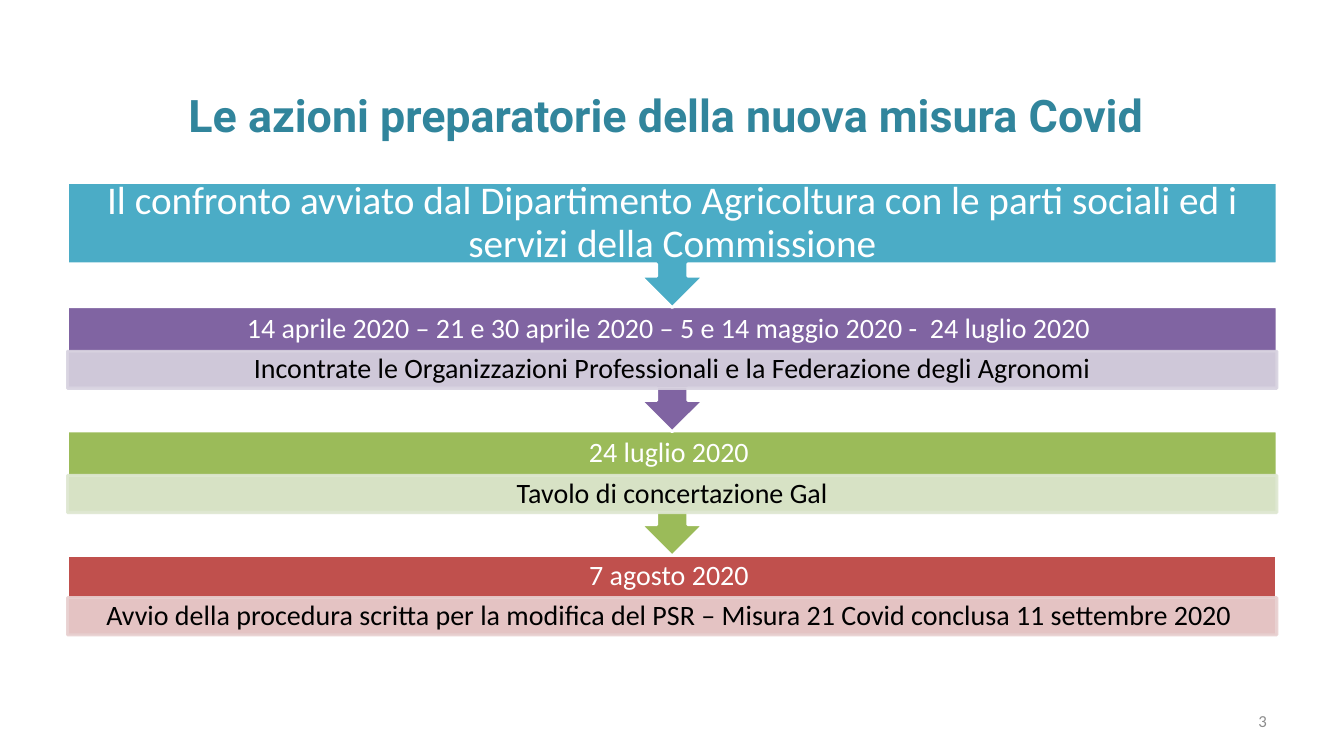
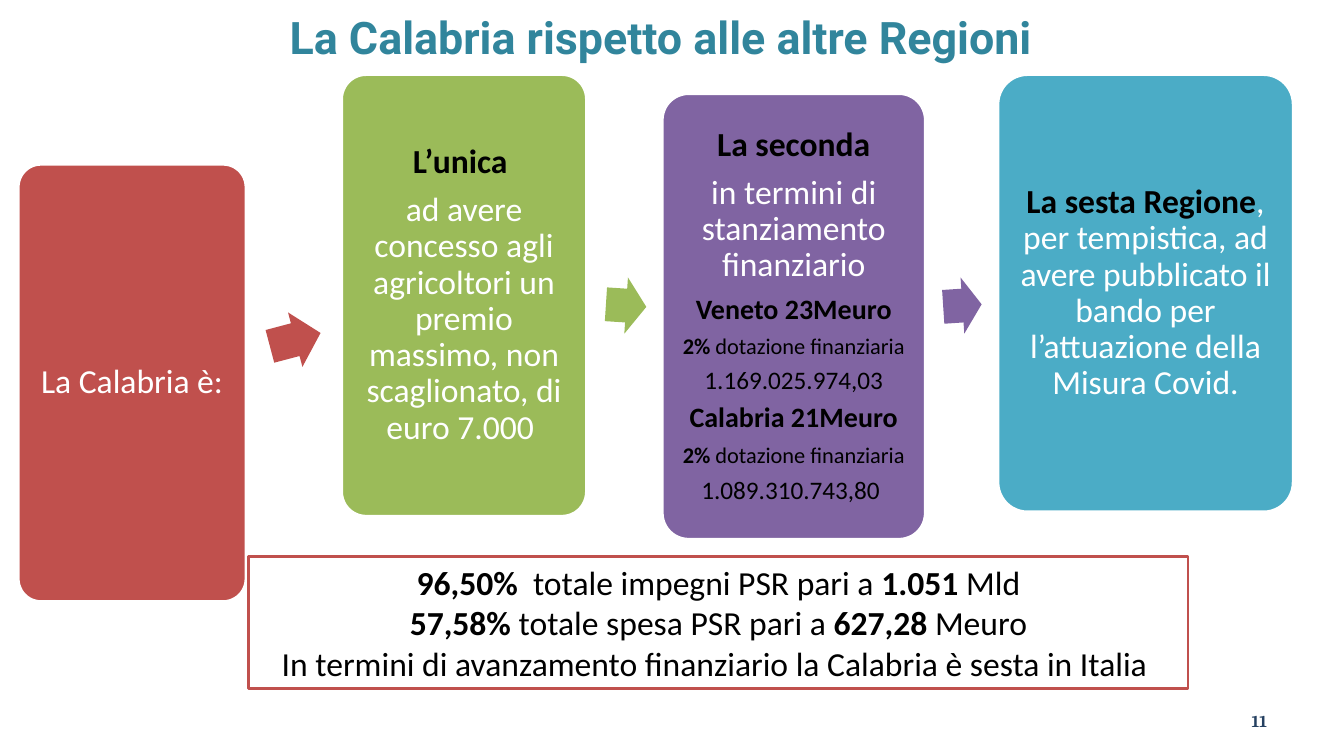
from dataclasses import dataclass

from lxml import etree
from pptx import Presentation
from pptx import util as u
from pptx.dml.color import RGBColor
from pptx.enum import shapes, text
from pptx.oxml import ns

WHITE = RGBColor(0xFF, 0xFF, 0xFF)
BLACK = RGBColor(0x00, 0x00, 0x00)
TEAL = RGBColor(0x31, 0x85, 0x9C)
AQUA = RGBColor(0x4B, 0xAC, 0xC6)
PURPLE = RGBColor(0x80, 0x64, 0xA2)
GREEN = RGBColor(0x9B, 0xBB, 0x59)
RED = RGBColor(0xC0, 0x50, 0x4D)
PALE_PURPLE = RGBColor(0xD8, 0xD3, 0xE0)
PALE_GREEN = RGBColor(0xDE, 0xE7, 0xD1)
PALE_RED = RGBColor(0xE8, 0xD0, 0xD0)
GREY = RGBColor(0x8C, 0x8C, 0x8C)
NAVY = RGBColor(0x25, 0x40, 0x61)

RECT = shapes.MSO_SHAPE.RECTANGLE
CENTER = text.PP_ALIGN.CENTER
RIGHT = text.PP_ALIGN.RIGHT


@dataclass
class Run:
    text: str
    bold: bool = None
    color: RGBColor = None
    size: float = None


@dataclass
class Para:
    runs: list
    size: float = 24
    color: RGBColor = BLACK
    bold: bool = False
    font: str = "Calibri"
    align: text.PP_ALIGN = CENTER


class Deck:
    def __init__(self):
        self.prs = Presentation()
        self.prs.slide_width, self.prs.slide_height = u.Cm(33.87), u.Cm(19.05)
        self.s = None

    def slide(self, title, left, top, width):
        self.s = self.prs.slides.add_slide(self.prs.slide_layouts[5])
        sp = self.s.shapes.title
        sp.left, sp.top, sp.width, sp.height = map(u.Cm, (left, top, width, 1.63))
        self.set_text(sp, [Para([Run(title)], 32, TEAL, True, "Roboto")])

    def set_text(self, sp, paras, inset=0.25, spacing=1.0, after=0):
        tf = sp.text_frame
        tf.word_wrap = True
        tf.vertical_anchor = text.MSO_ANCHOR.MIDDLE
        tf.margin_left = tf.margin_right = u.Cm(inset)
        tf.margin_top = tf.margin_bottom = u.Cm(min(inset, 0.13))
        for i, para in enumerate(paras):
            p = tf.paragraphs[0] if i == 0 else tf.add_paragraph()
            p.alignment = para.align
            p.line_spacing = spacing
            p.space_after = u.Pt(after * para.size)
            p.font.name, p.font.size = para.font, u.Pt(para.size)
            p.font.bold, p.font.color.rgb = para.bold, para.color
            for run in para.runs:
                r = p.add_run()
                r.text = run.text
                if run.bold is not None:
                    r.font.bold = run.bold
                if run.color is not None:
                    r.font.color.rgb = run.color
                if run.size is not None:
                    r.font.size = u.Pt(run.size)

    def shape(self, kind, box, fill, line=None, rotation=0, adj=(), alpha=None):
        sp = self.s.shapes.add_shape(kind, *map(u.Cm, box))
        sp.shadow.inherit = False
        sp.rotation = rotation
        for i, value in enumerate(adj):
            sp.adjustments[i] = value
        sp.fill.solid()
        sp.fill.fore_color.rgb = fill
        if line is None:
            sp.line.fill.background()
        else:
            sp.line.color.rgb = line
            sp.line.width = u.Pt(2)
        if alpha is not None:
            for clr in sp._element.spPr.iter(ns.qn("a:srgbClr")):
                etree.SubElement(clr, ns.qn("a:alpha"), val=str(alpha * 1000))
        return sp

    def label(self, box, para, **style):
        sp = self.s.shapes.add_textbox(*map(u.Cm, box))
        self.set_text(sp, [para], **style)

    def number(self, value, color, font, bold=False):
        para = Para([Run(value)], 12, color, bold, font, RIGHT)
        self.label((24.28, 17.65, 7.9, 1.02), para)

    def step(self, top, head, size, fill, head_height, detail=None, pale=None, last=False):
        left, width = 1.7, 30.48
        if last:
            self.shape(RECT, (left, top, width, 2.06), fill, WHITE)
        else:
            self.shape(shapes.MSO_SHAPE.UP_ARROW_CALLOUT, (left, top, width, 3.15),
                       fill, WHITE, rotation=180)
        self.label((left, top, width, head_height), Para([Run(head)], size, WHITE),
                   inset=0.5, spacing=0.9)
        if detail:
            sp = self.shape(RECT, (left, top + head_height, width, 0.94), pale, pale, alpha=90)
            self.set_text(sp, [Para([Run(detail)], 20)], inset=0.4, spacing=0.9)

    def card(self, box, fill, paras):
        sp = self.shape(shapes.MSO_SHAPE.ROUNDED_RECTANGLE, box, fill, WHITE, adj=[0.1])
        self.set_text(sp, paras, spacing=0.9, after=0.35)

    def arrow(self, left, top, width, fill, rotation):
        self.shape(shapes.MSO_SHAPE.RIGHT_ARROW, (left, top, width, 1.42), fill,
                   rotation=rotation, adj=[0.6, 0.5])


def preparatory_actions(deck):
    deck.slide("Le azioni preparatorie della nuova misura Covid", 2.31, 2.08, 28.96)
    steps = [
        ("Il confronto avviato dal Dipartimento Agricoltura con le parti sociali "
         "ed i servizi della Commissione", 28, AQUA, 2.06),
        ("14 aprile 2020 – 21 e 30 aprile 2020 – 5 e 14 maggio 2020 -  24 luglio 2020 ",
         20, PURPLE, 1.12,
         "Incontrate le Organizzazioni Professionali e la Federazione degli Agronomi",
         PALE_PURPLE),
        ("24 luglio 2020 ", 20, GREEN, 1.12, "Tavolo di concertazione Gal", PALE_GREEN),
        ("7 agosto 2020 ", 20, RED, 1.07,
         "Avvio della procedura scritta per la modifica del PSR – Misura 21 Covid "
         "conclusa 11 settembre 2020 ", PALE_RED),
    ]
    last = len(steps) - 1
    for i in range(last, -1, -1):
        deck.step(4.6 + 3.13 * i, *steps[i], last=i == last)
    deck.number("3", GREY, "Calibri")


def region_comparison(deck):
    deck.slide("La Calabria rispetto alle altre Regioni", 1.42, 0.1, 30.48)

    deck.card((0.46, 4.14, 5.74, 11.02), RED, [Para([Run("La Calabria è:")], color=WHITE)])
    deck.card((8.61, 1.88, 6.17, 11.13), GREEN, [
        Para([Run("L’unica ")], bold=True),
        Para([Run("ad avere concesso agli agricoltori un premio massimo, "
                  "non scaglionato, di euro 7.000 ")], color=WHITE)])

    share = Para([Run("2% ", bold=True), Run("dotazione finanziaria")], 16)
    deck.card((16.69, 2.36, 6.63, 11.23), PURPLE, [
        Para([Run("La seconda")], bold=True),
        Para([Run("in termini di stanziamento finanziario")], color=WHITE),
        Para([Run("Veneto 23Meuro")], 20, bold=True),
        share,
        Para([Run("1.169.025.974,03")], 18),
        Para([Run("Calabria 21Meuro")], 20, bold=True),
        share,
        Para([Run("1.089.310.743,80"), Run(" ", size=20)], 18)])
    deck.card((25.15, 1.88, 7.44, 11.02), AQUA, [
        Para([Run("La sesta Regione", bold=True, color=BLACK),
              Run(", per tempistica, ad avere pubblicato il bando per "
                  "l’attuazione della Misura Covid.")], color=WHITE)])

    deck.arrow(6.78, 7.85, 1.32, RED, 345.2)
    deck.arrow(15.27, 6.99, 1.02, GREEN, 3.7)
    deck.arrow(23.77, 6.99, 0.97, PURPLE, 356.2)
    deck.number("11", NAVY, "Cambria", True)

    sp = deck.shape(RECT, (6.27, 14.02, 23.67, 3.33), WHITE, RED)
    deck.set_text(sp, [
        Para([Run("96,50% ", bold=True), Run(" totale impegni PSR pari a "),
              Run("1.051 ", bold=True), Run("Mld")]),
        Para([Run("57,58% ", bold=True), Run("totale spesa PSR pari a "),
              Run("627,28 ", bold=True), Run("Meuro")]),
        Para([Run("In termini di avanzamento finanziario la Calabria è sesta in Italia ")])])


def main():
    deck = Deck()
    preparatory_actions(deck)
    region_comparison(deck)
    deck.prs.save("out.pptx")


if __name__ == "__main__":
    main()
